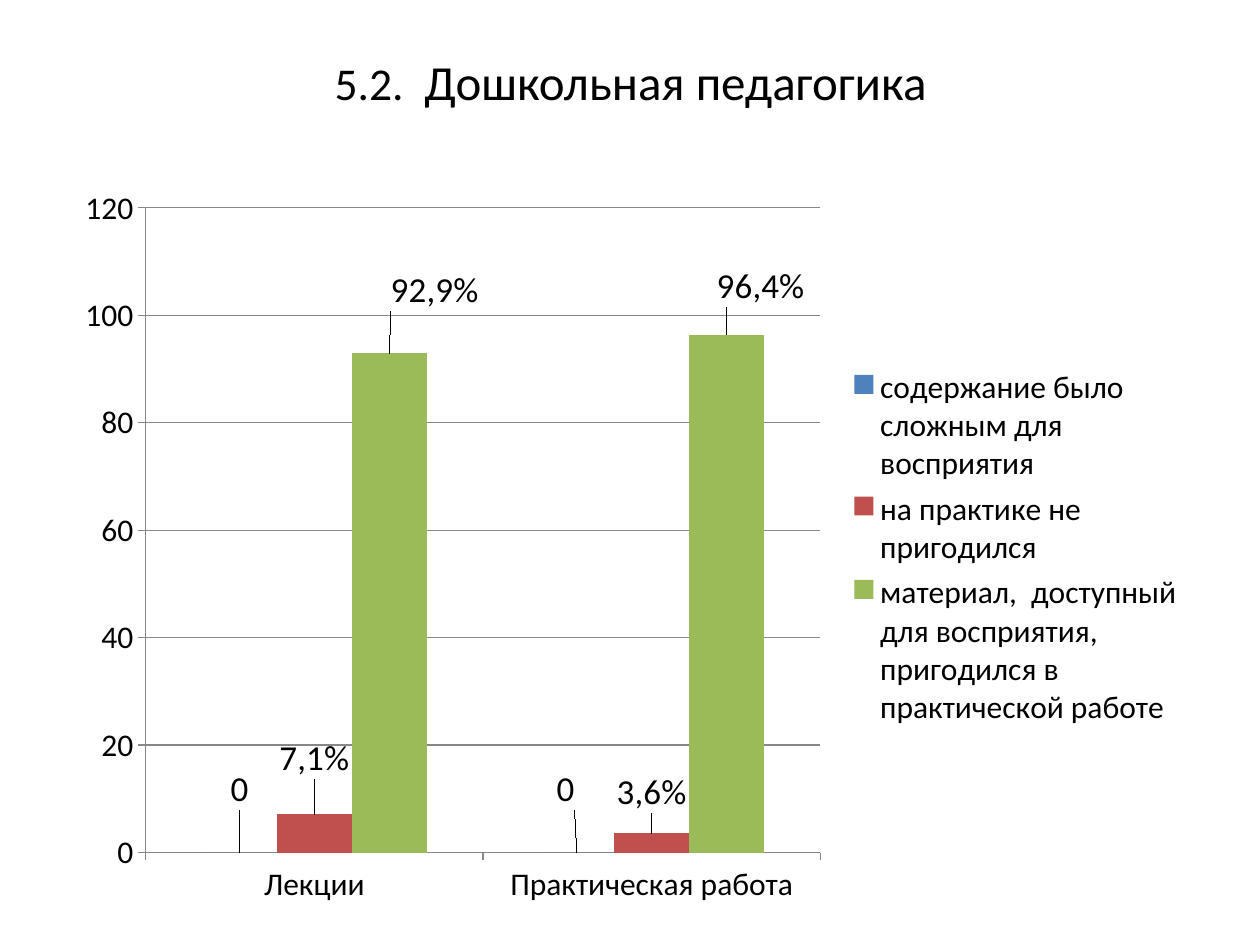
from lxml.etree import SubElement as Sub
from pptx import Presentation
from pptx.chart.data import CategoryChartData as Data
from pptx.dml.color import RGBColor as RGB
from pptx.enum.chart import XL_CHART_TYPE as Kind, XL_LABEL_POSITION as Spot
from pptx.enum.chart import XL_LEGEND_POSITION as Side, XL_TICK_MARK as Tick
from pptx.enum.text import MSO_ANCHOR as Anchor, PP_ALIGN as Align
from pptx.oxml import parse_xml
from pptx.oxml.ns import nsdecls, qn
from pptx.util import Inches, Pt

HUES = {"text": "000000", "line": "878787",
        "hard": "4F81BD", "useless": "C0504D", "useful": "9BBB59"}
CATS = ["Лекции", "Практическая работа"]
# name, colour, values, and per point: label text (None shows the value), x and y shift
ROWS = [
    ("содержание было сложным для восприятия", "hard", (0, 0),
     [(None, 0, -0.05), (None, -0.01, -0.05)]),
    ("на практике не пригодился", "useless", (7.1, 3.6),
     [("7,1%", 0, -0.04), ("3,6%", 0, -0.02)]),
    ("материал,  доступный для восприятия, пригодился в практической работе",
     "useful", (92.9, 96.4),
     [("92,9%", 0.04, -0.05), ("96,4%", 0.03, -0.03)]),
]


def place(host, spot, **vals):
    """Give a chart part a manual layout, as child number spot."""
    for old in host.findall(qn("c:layout")):
        host.remove(old)
    frame = parse_xml(f"<c:layout {nsdecls('c')}/>")
    inner = Sub(frame, qn("c:manualLayout"))
    for tag, val in vals.items():
        Sub(inner, qn("c:" + tag)).set("val", str(val))
    host.insert(spot, frame)


class Deck:
    face = "Calibri"

    def __init__(self):
        self.prs = Presentation()
        self.prs.slide_width, self.prs.slide_height = Inches(10), Inches(7.5)
        self.slide = self.prs.slides.add_slide(self.prs.slide_layouts[5])

    def style(self, font, size):
        for key, val in {"name": self.face, "size": Pt(size), "bold": False}.items():
            setattr(font, key, val)
        font.color.rgb = RGB.from_string(HUES["text"])

    def title(self, runs, box):
        shape = self.slide.shapes.title
        for key, val in zip(("left", "top", "width", "height"), box):
            setattr(shape, key, Inches(val))
        shape.text_frame.vertical_anchor = Anchor.MIDDLE
        para = shape.text_frame.paragraphs[0]
        para.alignment = Align.CENTER
        for text, size in runs:
            run = para.add_run()
            run.text = text
            self.style(run.font, size)

    def chart(self, box):
        data = Data()
        data.categories = CATS
        for name, _, vals, _ in ROWS:
            data.add_series(name, vals)
        chart = self.slide.shapes.add_chart(
            Kind.COLUMN_CLUSTERED, *map(Inches, box), data).chart
        chart.has_title = False
        self.style(chart.font, 18)
        plot = chart.plots[0]
        plot.gap_width, plot.overlap, plot.vary_by_categories = 150, 0, False
        for series, (_, hue, _, tags) in zip(plot.series, ROWS):
            series.format.fill.solid()
            series.format.fill.fore_color.rgb = RGB.from_string(HUES[hue])
            self.labels(series, tags)
        self.axes(chart)
        self.legend(chart)
        place(chart.plots[0]._element.getparent(), 0, layoutTarget="inner",
              xMode="edge", yMode="edge", x=0.073, y=0.044, w=0.595, h=0.866)

    def labels(self, series, tags):
        series.data_labels.show_value = True
        self.style(series.data_labels.font, 20)
        for num, (text, x, y) in enumerate(tags):
            label = series.points[num].data_label
            label.position = Spot.OUTSIDE_END
            if text:
                run = label.text_frame.paragraphs[0].add_run()
                run.text = text
                self.style(run.font, 20)
            else:
                self.style(label.font, 20)
            place(label._dLbl, 1, x=x, y=y)

    def axes(self, chart):
        val = chart.value_axis
        val.minimum_scale, val.maximum_scale, val.major_unit = 0, 120, 20
        val.has_major_gridlines = True
        lines = [val.major_gridlines.format.line]
        for axis in (val, chart.category_axis):
            axis.major_tick_mark = Tick.OUTSIDE
            axis.minor_tick_mark = Tick.NONE
            lines.append(axis.format.line)
        for line in lines:
            line.color.rgb = RGB.from_string(HUES["line"])
            line.width = Pt(0.75)

    def legend(self, chart):
        chart.has_legend = True
        key = chart.legend
        key.position, key.include_in_layout = Side.RIGHT, False
        self.style(key.font, 18)
        place(key._element, 1, xMode="edge", yMode="edge",
              x=0.69, y=0.25, w=0.3, h=0.5)


deck = Deck()
deck.title([("5.2.  ", 26), ("Дошкольная педагогика", 28)], (0.2, 0.3, 9.61, 0.69))
deck.chart((0.5, 1.39, 9, 5.91))
deck.prs.save("out.pptx")
